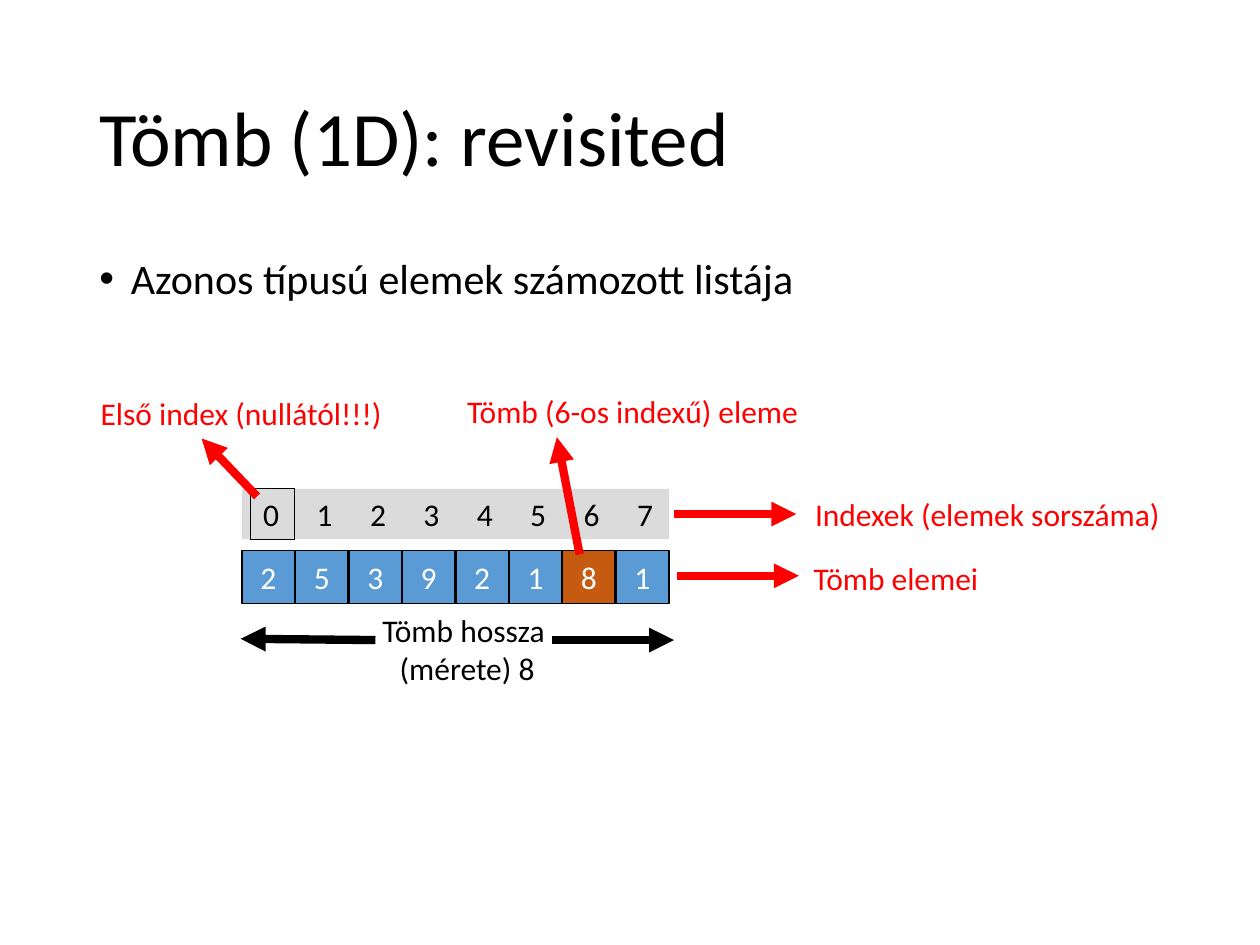
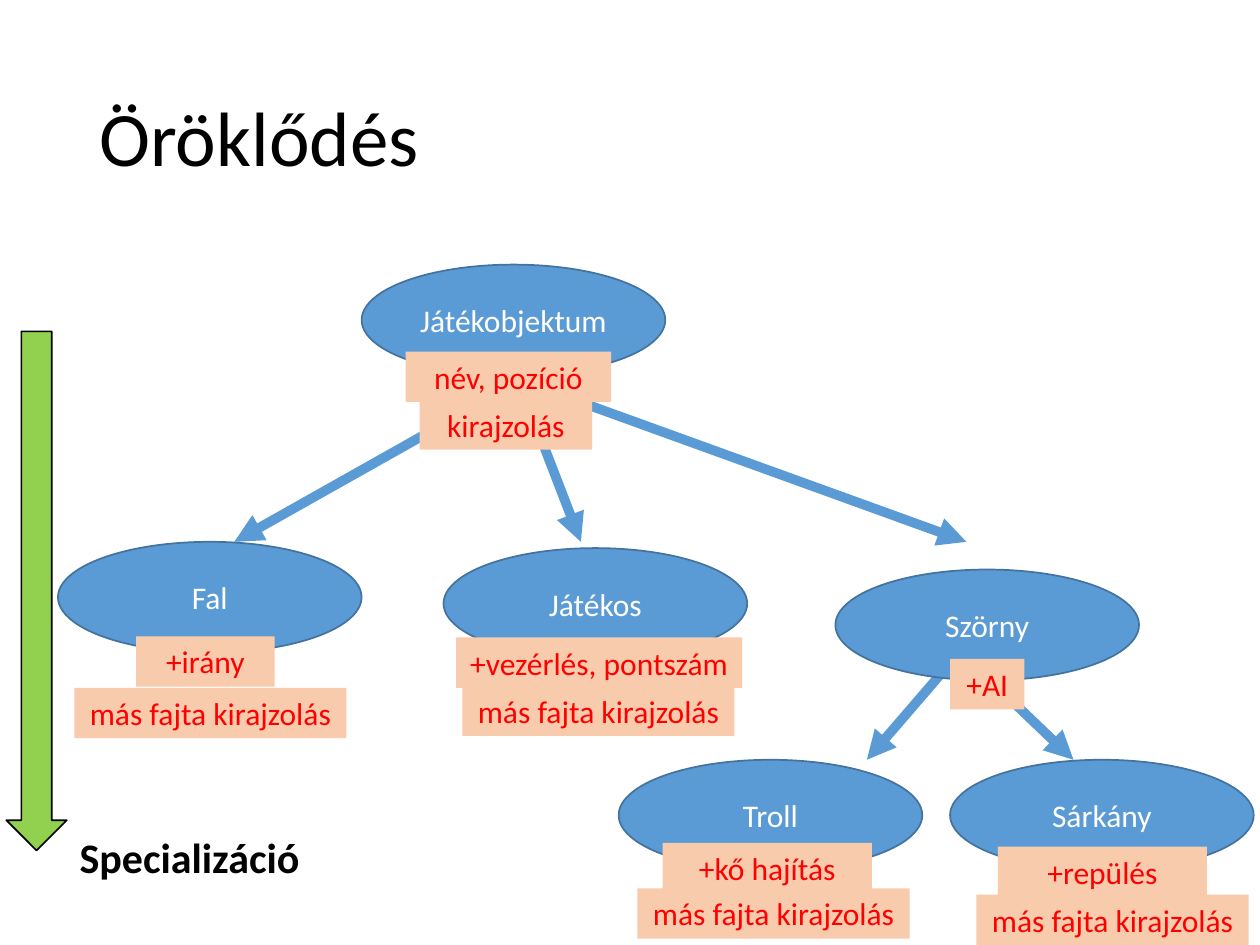
import pptx
import pptx.util
import pptx.dml.color
import pptx.enum.shapes
import pptx.enum.text
import pptx.oxml.ns
from lxml import etree

Inches = pptx.util.Inches
Pt = pptx.util.Pt
SHAPES = pptx.enum.shapes.MSO_SHAPE
ALIGN = pptx.enum.text.PP_ALIGN
ANCHOR = pptx.enum.text.MSO_ANCHOR
qn = pptx.oxml.ns.qn

FONT = "Calibri"
COLORS = {
    "black": "000000",
    "white": "FFFFFF",
    "red": "FF0000",
    "blue": "5B9BD5",
    "outline": "43739E",
    "orange": "C55A11",
    "gray": "DBDBDB",
    "green": "92D050",
    "peach": "F8CBAD",
}
LABEL_HEIGHT = 0.4
CELL_SIZE = 0.42
CELL_STEP = 0.424
ARRAY_LEFT = 1.92
ARRAY_VALUES = [2, 5, 3, 9, 2, 1, 8, 1]
MARKED_INDEX = 6
NODE_SIZE = (2.41, 0.88)
OWN_DRAWING = "más fajta kirajzolás"


def rgb(name):
    return pptx.dml.color.RGBColor.from_string(COLORS[name])


def write(box, text, color, size=18, align=ALIGN.LEFT, anchor=ANCHOR.TOP, bold=False):
    frame = box.text_frame
    frame.word_wrap = True
    frame.vertical_anchor = anchor
    frame.text = text
    for para in frame.paragraphs:
        para.alignment = align
        para.font.name = FONT
        para.font.size = Pt(size)
        para.font.bold = bold
        para.font.color.rgb = rgb(color)
    return frame.paragraphs[0]


def add_text(page, place, text, color="black", **style):
    box = page.shapes.add_textbox(*map(Inches, place))
    return write(box, text, color, **style)


def add_shape(page, kind, place, fill=None, line=None, width=1):
    shape = page.shapes.add_shape(kind, *map(Inches, place))
    shape.shadow.inherit = False
    if fill:
        shape.fill.solid()
        shape.fill.fore_color.rgb = rgb(fill)
    else:
        shape.fill.background()
    if line:
        shape.line.color.rgb = rgb(line)
        shape.line.width = Pt(width)
    else:
        shape.line.fill.background()
    return shape


def add_arrow(page, start, end, color, width=4.75):
    arrow = page.shapes.add_connector(
        pptx.enum.shapes.MSO_CONNECTOR.STRAIGHT, *map(Inches, start + end)
    )
    arrow.line.color.rgb = rgb(color)
    arrow.line.width = Pt(width)
    properties = arrow.element.spPr
    etree.SubElement(properties.find(qn("a:ln")), qn("a:tailEnd"), type="triangle")
    etree.SubElement(properties, qn("a:effectLst"))


def add_page(deck, title):
    page = deck.slides.add_slide(deck.slide_layouts[6])
    para = add_text(page, (0.69, 0.4, 8.62, 1.45), title, size=44, anchor=ANCHOR.MIDDLE)
    para.line_spacing = 0.9
    return page


def add_bullet(page, place, text):
    para = add_text(page, place, text, size=24)
    para.line_spacing = 0.9
    para.space_before = Pt(10)
    properties = para._p.get_or_add_pPr()
    properties.set("marL", str(Inches(0.25)))
    properties.set("indent", str(-Inches(0.25)))
    etree.SubElement(properties, qn("a:buFont"), typeface="Arial")
    etree.SubElement(properties, qn("a:buChar"), char="•")


def add_array(page):
    add_shape(page, SHAPES.RECTANGLE, (ARRAY_LEFT, 3.88, 3.39, LABEL_HEIGHT), "gray")
    for index, value in enumerate(ARRAY_VALUES):
        left = ARRAY_LEFT + index * CELL_STEP
        fill = "orange" if index == MARKED_INDEX else "blue"
        cell = add_shape(
            page, SHAPES.RECTANGLE, (left, 4.37, CELL_SIZE, CELL_SIZE), fill, "black"
        )
        write(cell, str(value), "white", align=ALIGN.CENTER, anchor=ANCHOR.MIDDLE)
        place = (left + 0.07, 3.88, 0.35, LABEL_HEIGHT)
        if index == 0:
            add_shape(page, SHAPES.RECTANGLE, place, line="black", width=0.75)
        add_text(page, place, str(index))


def add_node(page, left, top, name):
    node = add_shape(page, SHAPES.OVAL, (left, top, *NODE_SIZE), "blue", "outline")
    write(node, name, "white", align=ALIGN.CENTER, anchor=ANCHOR.MIDDLE)


def add_tag(page, left, top, width, text):
    tag = add_shape(page, SHAPES.RECTANGLE, (left, top, width, LABEL_HEIGHT), "peach")
    write(tag, text, "red", align=ALIGN.CENTER)


def build_array_page(deck):
    page = add_page(deck, "Tömb (1D): revisited")
    add_bullet(page, (0.69, 2, 8.62, 4.76), "Azonos típusú elemek számozott listája")
    add_array(page)
    for left, top, width, text in [
        (6.37, 3.88, 2.98, "Indexek (elemek sorszáma)"),
        (6.36, 4.39, 2.98, "Tömb elemei"),
        (0.7, 3.08, 2.58, "Első index (nullától!!!)"),
        (3.61, 3.06, 2.86, "Tömb (6-os indexű) eleme"),
    ]:
        add_text(page, (left, top, width, LABEL_HEIGHT), text, "red")
    add_text(
        page, (2.85, 4.8, 1.66, 0.71), "Tömb hossza\n (mérete) 8", align=ALIGN.CENTER
    )
    for start, end, color in [
        ((5.35, 4.08), (6.32, 4.08), "red"),
        ((5.37, 4.57), (6.34, 4.57), "red"),
        ((2.04, 3.94), (1.6, 3.48), "red"),
        ((4.6, 4.4), (4.42, 3.47), "red"),
        ((4.38, 5.08), (5.35, 5.08), "black"),
        ((2.98, 5.08), (1.91, 5.07), "black"),
    ]:
        add_arrow(page, start, end, color)


def build_inheritance_page(deck):
    page = add_page(deck, "Öröklődés")
    for start, end in [
        ((4.12, 3.03), (4.61, 4.3)),
        ((4.08, 3.05), (1.86, 4.3)),
        ((4.16, 3.03), (7.67, 4.3)),
        ((7.57, 5.23), (6.88, 6.03)),
        ((7.62, 5.17), (8.52, 6.03)),
    ]:
        add_arrow(page, start, end, "blue", 5.5)
    for left, top, name in [
        (2.87, 2.1, "Játékobjektum"),
        (0.46, 4.3, "Fal"),
        (3.52, 4.35, "Játékos"),
        (6.63, 4.52, "Szörny"),
        (4.91, 6.03, "Troll"),
        (7.54, 6.03, "Sárkány"),
    ]:
        add_node(page, left, top, name)
    for left, top, width, text in [
        (3.22, 2.79, 1.63, "név, pozíció"),
        (3.33, 3.17, 1.37, "kirajzolás"),
        (1.08, 5.05, 1.1, "+irány"),
        (3.62, 5.06, 2.27, "+vezérlés, pontszám"),
        (7.54, 5.23, 0.59, "+AI"),
        (5.26, 6.69, 1.66, "+kő hajítás"),
        (7.92, 6.72, 1.66, "+repülés"),
    ]:
        add_tag(page, left, top, width, text)
    for left, top in [(0.59, 5.46), (3.67, 5.44), (5.06, 7.05), (7.75, 7.1)]:
        add_tag(page, left, top, 2.16, OWN_DRAWING)
    add_shape(page, SHAPES.DOWN_ARROW, (0.05, 2.63, 0.48, 4.12), "green", "black")
    add_text(
        page,
        (0.17, 6.55, 2.67, 0.5),
        "Specializáció",
        size=24,
        align=ALIGN.CENTER,
        bold=True,
    )


def main():
    deck = pptx.Presentation()
    deck.slide_width = Inches(10)
    deck.slide_height = Inches(7.5)
    build_array_page(deck)
    build_inheritance_page(deck)
    deck.save("out.pptx")


if __name__ == "__main__":
    main()
